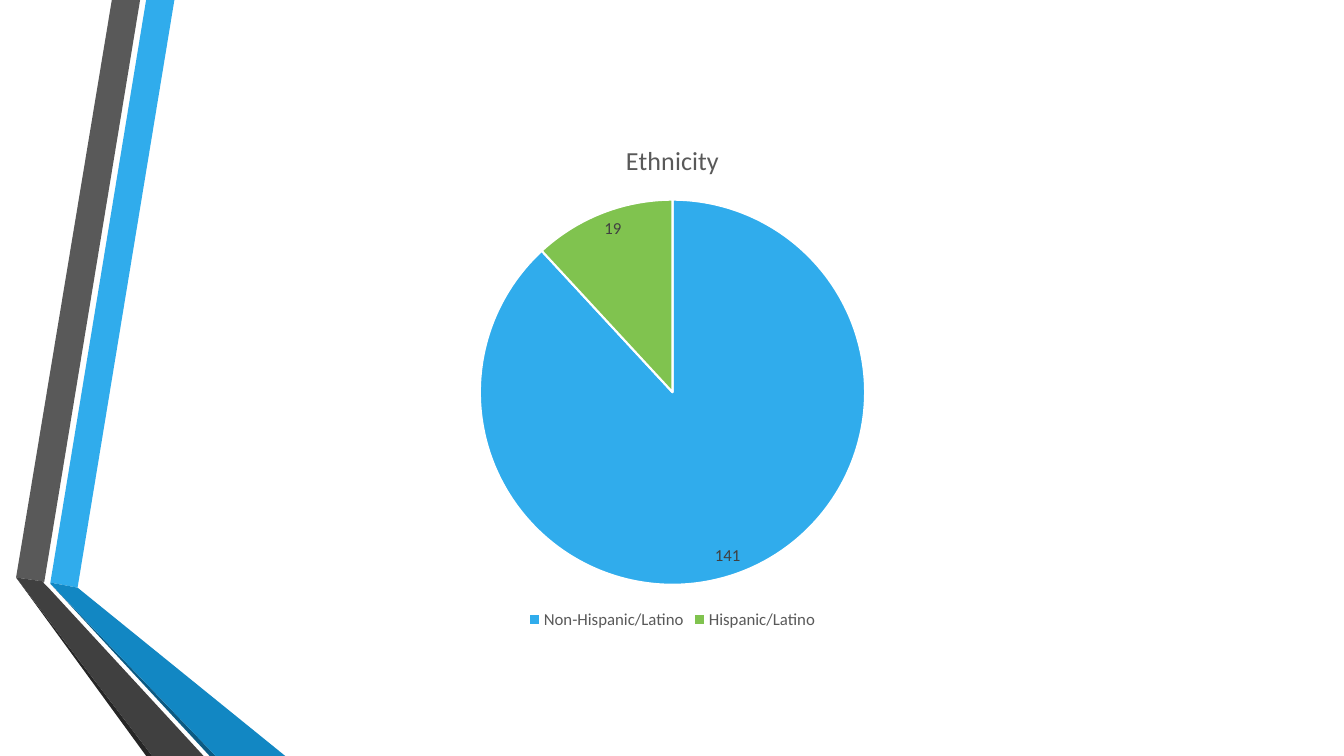
from pptx import Presentation
from pptx import util as u
from pptx.chart import data as chart_data
from pptx.dml import color
from pptx.enum import chart as ch

COLORS = {
    "blue": "30ACEC",
    "blue_fold": "1287C3",
    "blue_edge": "0C5A82",
    "gray": "595959",
    "gray_fold": "404040",
    "gray_edge": "262626",
    "green": "80C34F",
    "white": "FFFFFF",
}
FONT = "Calibri"

RIBBONS = [
    ("blue", [(0.5, 5.78), (0.77, 5.83), (1.73, 0), (1.45, 0)]),
    ("gray", [(1.39, 0), (1.11, 0), (0.16, 5.73), (0.44, 5.77)]),
    ("gray_edge", [(0.16, 5.73), (1.45, 7.5), (1.51, 7.5)]),
    ("blue_edge", [(0.5, 5.79), (2.08, 7.5), (2.14, 7.5)]),
    ("blue_fold", [(0.5, 5.79), (2.14, 7.5), (2.83, 7.5), (0.77, 5.83), (0.5, 5.78)]),
    ("gray_fold", [(2.02, 7.5), (0.48, 5.83), (0.43, 5.78), (0.44, 5.77),
                   (0.16, 5.73), (1.51, 7.5)]),
]


def rgb(name):
    return color.RGBColor.from_string(COLORS[name])


def style_font(font, size, color_name):
    font.name = FONT
    font.size = u.Pt(size)
    font.bold = False
    font.color.rgb = rgb(color_name)


def draw_ribbons(slide, left, top):
    for color_name, corners in RIBBONS:
        points = [(u.Inches(left + x), u.Inches(top + y)) for x, y in corners]
        outline = slide.shapes.build_freeform(*points[0])
        outline.add_line_segments(points[1:], close=True)
        ribbon = outline.convert_to_shape()
        ribbon.shadow.inherit = False
        ribbon.fill.solid()
        ribbon.fill.fore_color.rgb = rgb(color_name)
        ribbon.line.fill.background()


def draw_ethnicity_pie(slide, left, top, width, height):
    ethnicity = chart_data.CategoryChartData()
    ethnicity.categories = ["Non-Hispanic/Latino", "Hispanic/Latino"]
    ethnicity.add_series("Series 1", (141, 19))
    box = [u.Inches(length) for length in (left, top, width, height)]
    pie = slide.shapes.add_chart(ch.XL_CHART_TYPE.PIE, *box, ethnicity).chart
    style_font(pie.font, 12, "gray")

    pie.has_title = True
    heading = pie.chart_title.text_frame.paragraphs[0].add_run()
    heading.text = "Ethnicity"
    style_font(heading.font, 18.6, "gray")

    pie.has_legend = True
    pie.legend.position = ch.XL_LEGEND_POSITION.BOTTOM
    pie.legend.include_in_layout = False
    style_font(pie.legend.font, 12, "gray")

    plot = pie.plots[0]
    plot.vary_by_categories = True
    for index, color_name in enumerate(("blue", "green")):
        slice_format = plot.series[0].points[index].format
        slice_format.fill.solid()
        slice_format.fill.fore_color.rgb = rgb(color_name)
        slice_format.line.color.rgb = rgb("white")
        slice_format.line.width = u.Pt(1.5)

    plot.has_data_labels = True
    counts = plot.data_labels
    counts.show_value = True
    counts.show_percentage = False
    counts.position = ch.XL_LABEL_POSITION.INSIDE_END
    style_font(counts.font, 12, "gray_fold")


def main():
    deck = Presentation()
    deck.slide_width = u.Inches(13.33)
    deck.slide_height = u.Inches(7.5)
    slide = deck.slides.add_slide(deck.slide_layouts[6])
    draw_ribbons(slide, 0, 0)
    draw_ethnicity_pie(slide, 4.36, 1.21, 4.62, 5.08)
    deck.save("out.pptx")


if __name__ == "__main__":
    main()
